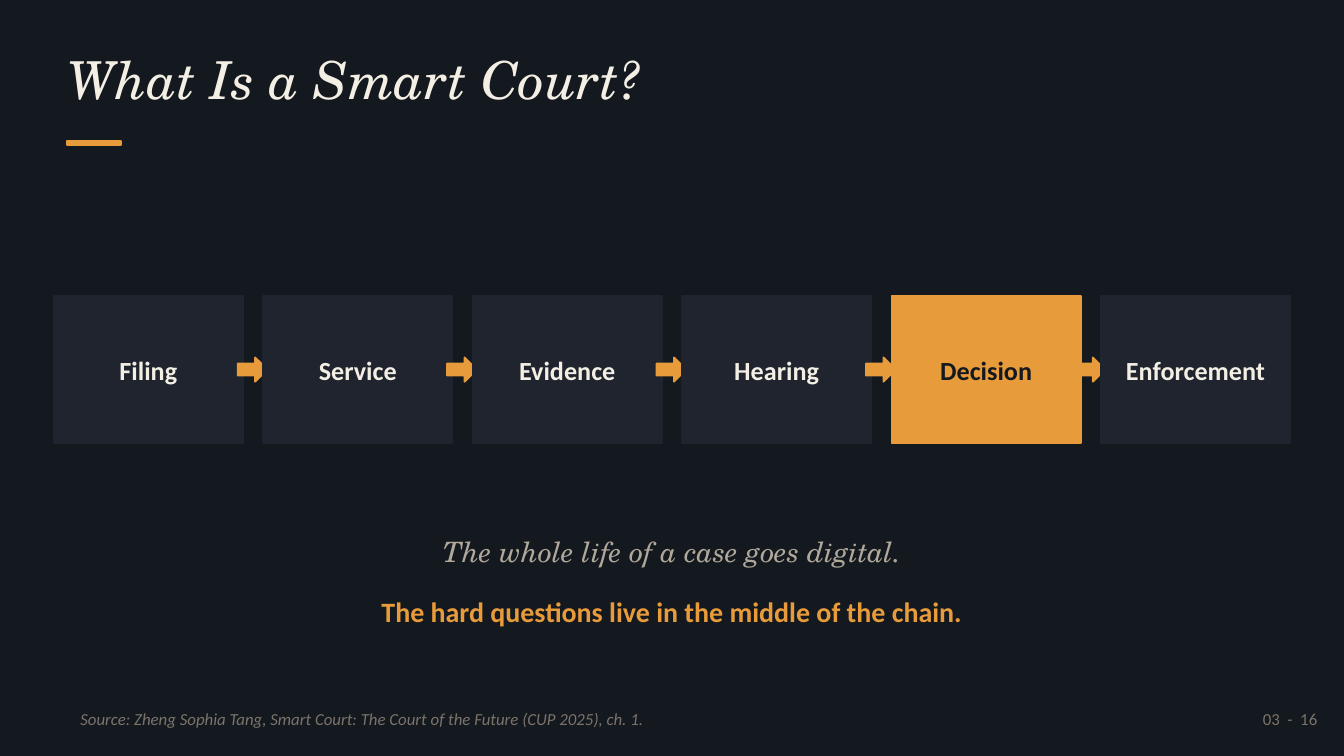
from pptx import Presentation
from pptx.dml.color import RGBColor
from pptx.enum.shapes import MSO_SHAPE as Shape
from pptx.enum.text import MSO_ANCHOR as Anchor, MSO_AUTO_SIZE as Fit, PP_ALIGN as Align
from pptx.util import Inches, Pt

COLORS = {
    "night": "14181F",
    "panel": "1F242E",
    "amber": "E89B3A",
    "cream": "F4EFE5",
    "sand": "B0A89A",
    "dim": "7A746A",
}
SERIF, SANS = "TeX Gyre Schola", "Calibri"
STEPS = ["Filing", "Service", "Evidence", "Hearing", "Decision", "Enforcement"]
FOCUS = "Decision"


def color(name):
    return RGBColor.from_string(COLORS[name])


def write(frame, text, size, face, tint, bold=False, italic=False,
          align=Align.LEFT, anchor=Anchor.MIDDLE):
    frame.word_wrap = True
    frame.auto_size = Fit.NONE
    frame.vertical_anchor = anchor
    para = frame.paragraphs[0]
    para.alignment = align
    run = para.add_run()
    run.text = text
    font = run.font
    font.size, font.name = Pt(size), face
    font.bold, font.italic = bold, italic
    font.color.rgb = color(tint)


def block(slide, kind, box, tint):
    shape = slide.shapes.add_shape(kind, *map(Inches, box))
    shape.shadow.inherit = False
    shape.fill.solid()
    shape.fill.fore_color.rgb = color(tint)
    shape.line.color.rgb = color(tint)
    shape.line.width = Pt(1)
    return shape


def label(slide, box, *args, **style):
    frame = slide.shapes.add_textbox(*map(Inches, box)).text_frame
    write(frame, *args, **style)


def header(slide, box):
    left, top, width, height = box
    title = slide.shapes.title
    title.left, title.top, title.width, title.height = map(Inches, box)
    frame = title.text_frame
    frame.margin_left = frame.margin_right = 0
    frame.margin_top = frame.margin_bottom = 0
    write(frame, "What Is a Smart Court?", 28, SERIF, "cream",
          italic=True, anchor=Anchor.TOP)
    block(slide, Shape.RECTANGLE, (left, top + 0.7, 0.4, 0.03), "amber")


def chain(slide, box, gap=0.15):
    left, top, width, height = box
    count = len(STEPS)
    side = (width - gap * (count - 1)) / count
    for i, step in enumerate(STEPS):
        x = left + i * (side + gap)
        hot = step == FOCUS
        card = block(slide, Shape.RECTANGLE, (x, top, side, height),
                     "amber" if hot else "panel")
        write(card.text_frame, step, 14, SANS, "night" if hot else "cream",
              bold=True, align=Align.CENTER)
        if i < count - 1:
            block(slide, Shape.RIGHT_ARROW,
                  (x + side - 0.04, top + height / 2 - 0.09, 0.22, 0.18), "amber")


def closing(slide, box):
    left, top, width, height = box
    label(slide, (left, top, width, 0.4),
          "The whole life of a case goes digital.", 15, SERIF, "sand",
          italic=True, align=Align.CENTER)
    label(slide, (left, top + height - 0.4, width, 0.4),
          "The hard questions live in the middle of the chain.", 15, SANS, "amber",
          bold=True, align=Align.CENTER)


def footer(slide, box):
    left, top, width, height = box
    label(slide, (left, top, 8, height),
          "Source: Zheng Sophia Tang, Smart Court: The Court of the Future (CUP 2025), ch. 1.",
          9, SANS, "dim", italic=True)
    label(slide, (left + width - 1.2, top, 1.2, height), "03  -  16",
          9, SANS, "dim", align=Align.RIGHT)


def main():
    deck = Presentation()
    deck.slide_width, deck.slide_height = Inches(10), Inches(5.625)
    slide = deck.slides.add_slide(deck.slide_layouts[5])
    back = slide.background.fill
    back.solid()
    back.fore_color.rgb = color("night")
    header(slide, (0.5, 0.35, 9, 0.8))
    chain(slide, (0.4, 2.2, 9.2, 1.1))
    closing(slide, (0.5, 3.9, 9, 0.85))
    footer(slide, (0.5, 5.2, 9.4, 0.3))
    deck.save("out.pptx")


if __name__ == "__main__":
    main()
